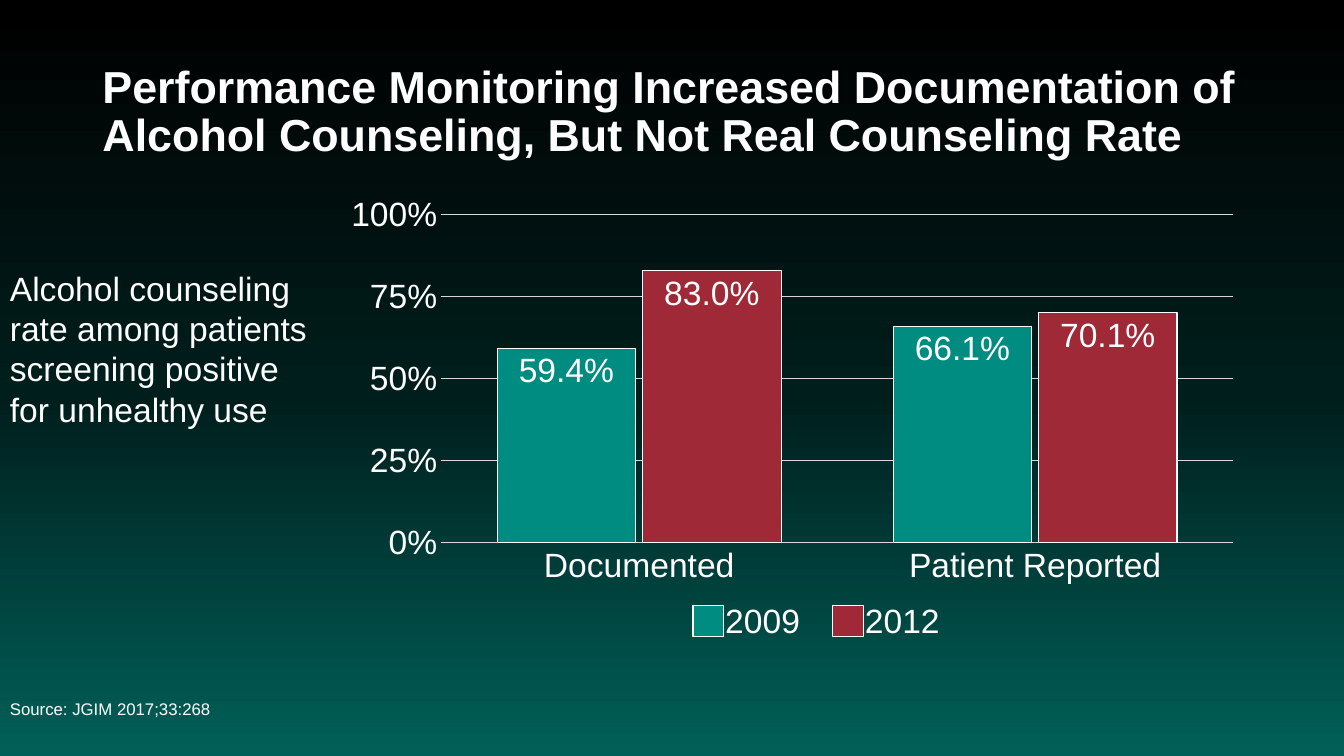
import copy
from dataclasses import dataclass

import pptx
import pptx.chart.data
import pptx.dml.color
import pptx.enum.chart
import pptx.enum.shapes
import pptx.enum.text
import pptx.util
from lxml import etree

RGB = pptx.dml.color.RGBColor
Pt = pptx.util.Pt

BLACK = RGB(0x00, 0x00, 0x00)
DARK_TEAL = RGB(0x00, 0x1E, 0x1C)
DEEP_TEAL = RGB(0x00, 0x60, 0x59)
WHITE = RGB(0xFF, 0xFF, 0xFF)
GRAY = RGB(0xD9, 0xD9, 0xD9)
TEAL = RGB(0x00, 0x8C, 0x81)
RED = RGB(0x9F, 0x29, 0x36)

FONT = "Arial"
EMU_PER_PX = 9525
BACKGROUND_STOPS = ((0, BLACK), (0.52, DARK_TEAL), (1, DEEP_TEAL))
PLOT_LAYOUT = {"layoutTarget": "inner", "xMode": "edge", "yMode": "edge",
               "x": 0.12, "y": 0.06, "w": 0.86, "h": 0.7}
LEGEND_LAYOUT = {"xMode": "edge", "yMode": "edge",
                 "x": 0.37, "y": 0.88, "w": 0.32, "h": 0.1}


@dataclass(frozen=True)
class YearSeries:
    name: str
    values: tuple[float, ...]
    color: RGB
    key_left: int


YEARS = (
    YearSeries("2009", (0.594, 0.661), TEAL, 660),
    YearSeries("2012", (0.83, 0.701), RED, 793),
)


def px(n: int) -> int:
    return pptx.util.Emu(n * EMU_PER_PX)


def box(left: int, top: int, width: int, height: int) -> tuple[int, ...]:
    return px(left), px(top), px(width), px(height)


def set_font(font, size: int, bold: bool = False) -> None:
    font.name = FONT
    font.size = Pt(size)
    font.bold = bold
    font.color.rgb = WHITE


def set_line(line, color: RGB) -> None:
    line.color.rgb = color
    line.width = Pt(0.75)


def write_text(sp, text: str, *, size: int, bold: bool = False,
               spacing: float = 1.0, middle: bool = True) -> None:
    anchors = pptx.enum.text.MSO_ANCHOR
    tf = sp.text_frame
    tf.word_wrap = True
    tf.auto_size = pptx.enum.text.MSO_AUTO_SIZE.NONE
    tf.vertical_anchor = anchors.MIDDLE if middle else anchors.TOP
    p = tf.paragraphs[0]
    p.alignment = pptx.enum.text.PP_ALIGN.LEFT
    p.line_spacing = spacing
    p.space_before = Pt(0)
    r = p.add_run()
    r.text = text
    set_font(r.font, size, bold)


def paint_background(s) -> None:
    fill = s.background.fill
    fill.gradient()
    fill.gradient_angle = 270
    stops = s._element.xpath(".//p:bg//a:gsLst")[0]
    stops.append(copy.deepcopy(stops[0]))
    for stop, (position, color) in zip(fill.gradient_stops, BACKGROUND_STOPS):
        stop.position = position
        stop.color.rgb = color


def set_layout(part, index: int, settings: dict) -> None:
    ns = part.nsmap["c"]
    for old in part.findall(f"{{{ns}}}layout"):
        part.remove(old)
    layout = etree.Element(f"{{{ns}}}layout")
    manual = etree.SubElement(layout, f"{{{ns}}}manualLayout")
    for tag, value in settings.items():
        etree.SubElement(manual, f"{{{ns}}}{tag}").set("val", str(value))
    part.insert(index, layout)


def add_counseling_chart(s) -> None:
    enums = pptx.enum.chart
    data = pptx.chart.data.CategoryChartData(number_format="0.0%")
    data.categories = ["Documented", "Patient Reported"]
    for year in YEARS:
        data.add_series(year.name, year.values)
    chart = s.shapes.add_chart(enums.XL_CHART_TYPE.COLUMN_CLUSTERED,
                               *box(315, 178, 877, 446), data).chart
    set_font(chart.font, 24)
    chart.has_title = False
    chart.has_legend = True
    chart.legend.position = enums.XL_LEGEND_POSITION.BOTTOM
    chart.legend.include_in_layout = False
    set_font(chart.legend.font, 24)
    chart_xml = chart._chartSpace.chart
    set_layout(chart_xml.plotArea, 0, PLOT_LAYOUT)
    set_layout(chart_xml.xpath("c:legend")[0], 1, LEGEND_LAYOUT)

    for axis in (chart.category_axis, chart.value_axis):
        axis.major_tick_mark = enums.XL_TICK_MARK.NONE
        axis.minor_tick_mark = enums.XL_TICK_MARK.NONE
        set_font(axis.tick_labels.font, 24)
    set_line(chart.category_axis.format.line, GRAY)
    rate_axis = chart.value_axis
    rate_axis.minimum_scale = 0
    rate_axis.maximum_scale = 1
    rate_axis.major_unit = 0.25
    rate_axis.tick_labels.number_format = "0%"
    rate_axis.tick_labels.number_format_is_linked = False
    rate_axis.format.line.fill.background()
    set_line(rate_axis.major_gridlines.format.line, GRAY)

    plot = chart.plots[0]
    plot.gap_width = 81
    plot.overlap = -5
    plot.vary_by_categories = False
    for series, year in zip(plot.series, YEARS):
        series.format.fill.solid()
        series.format.fill.fore_color.rgb = year.color
        set_line(series.format.line, WHITE)
        labels = series.data_labels
        labels.show_value = True
        labels.position = enums.XL_LABEL_POSITION.INSIDE_END
        labels.number_format = "0.0%"
        labels.number_format_is_linked = False
        set_font(labels.font, 24)


def add_legend_key(s, year: YearSeries) -> None:
    sp = s.shapes.add_shape(pptx.enum.shapes.MSO_SHAPE.RECTANGLE,
                            *box(year.key_left, 577, 29, 29))
    sp.shadow.inherit = False
    sp.fill.solid()
    sp.fill.fore_color.rgb = year.color
    set_line(sp.line, WHITE)


def main() -> None:
    prs = pptx.Presentation()
    prs.slide_width, prs.slide_height = px(1280), px(720)
    s = prs.slides.add_slide(prs.slide_layouts.get_by_name("Title Only"))
    paint_background(s)

    title = s.shapes.title
    title.left, title.top, title.width, title.height = box(88, 38, 1104, 139)
    write_text(title, "Performance Monitoring Increased Documentation of "
               "Alcohol Counseling, But Not Real Counseling Rate",
               size=32, bold=True, spacing=0.9)
    write_text(s.shapes.add_textbox(*box(0, 632, 864, 88)),
               "Source: JGIM 2017;33:268", size=12, spacing=0.9)
    write_text(s.shapes.add_textbox(*box(0, 250, 315, 165)),
               "Alcohol counseling rate among patients screening positive "
               "for unhealthy use", size=24, middle=False)

    add_counseling_chart(s)
    for year in YEARS:
        add_legend_key(s, year)
    prs.save("out.pptx")


if __name__ == "__main__":
    main()
